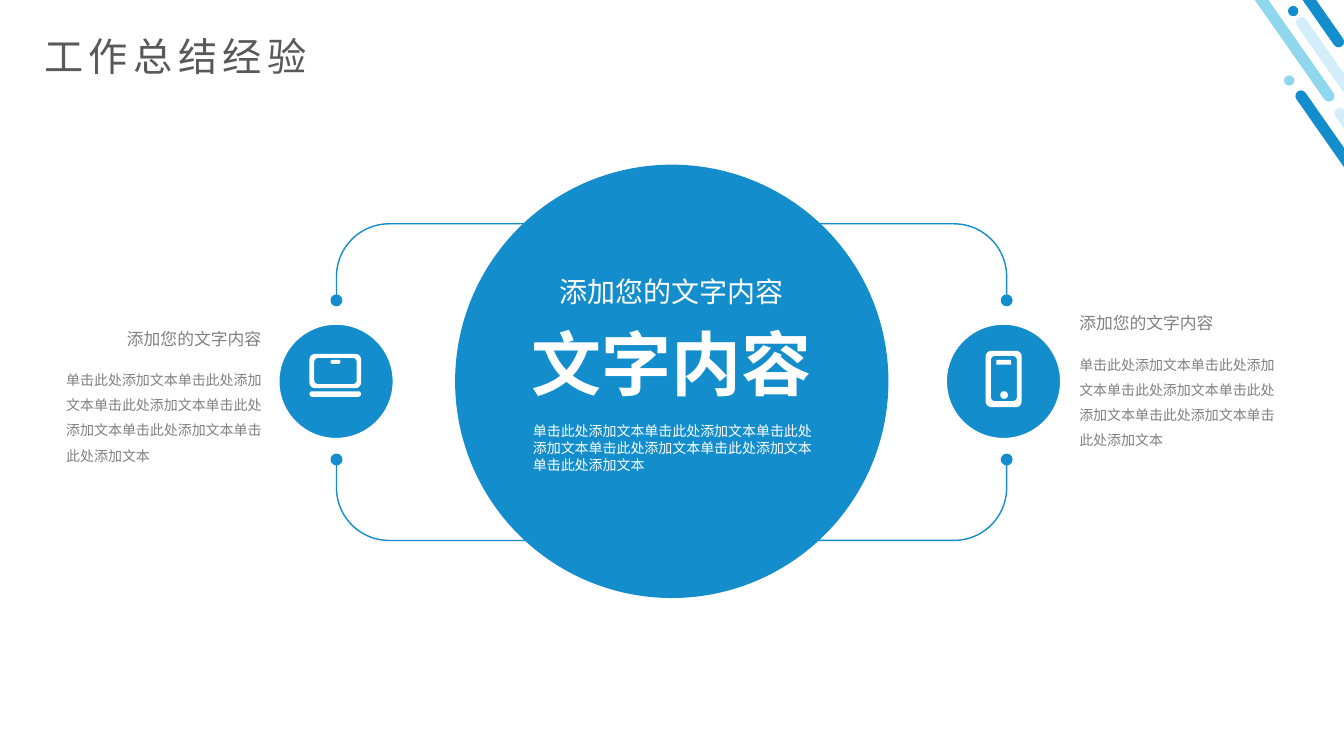
import math
from typing import NamedTuple

from lxml import etree
from pptx import Presentation
from pptx.dml.color import RGBColor
from pptx.enum import shapes, text
from pptx.oxml import ns
from pptx.util import Cm, Pt

COLORS = {"blue": "138DCC", "sky": "8FD7ED", "pale": "D3EEF9", "white": "FFFFFF",
          "title": "595959", "grey": "808080"}
FONT = "Noto Sans CJK SC"
HEADING = "添加您的文字内容"
BODY = "单击此处添加文本" * 6
CENTER_X, CENTER_Y = 16.93, 9.61
ROUND, OVAL = shapes.MSO_SHAPE.ROUNDED_RECTANGLE, shapes.MSO_SHAPE.OVAL


class Stripe(NamedTuple):
    left: float
    top: float
    length: float
    color: str


class Dot(NamedTuple):
    x: float
    y: float
    size: float
    color: str = "blue"


class Label(NamedTuple):
    left: float
    top: float
    width: float
    height: float
    words: str
    size: int
    color: str
    align: text.PP_ALIGN = text.PP_ALIGN.LEFT
    bold: bool = False
    line_spacing: float = 1.0
    tracking: int = 0  # hundredths of a point


class Outline(NamedTuple):
    left: float
    top: float
    width: float
    height: float
    radius: float


STRIPES = [
    Stripe(34.16, 1.8, 5.56, "blue"),
    Stripe(35.15, 2.24, 5.56, "pale"),
    Stripe(31.42, -3.84, 7.01, "sky"),
    Stripe(34.59, -0.18, 7.01, "pale"),
    Stripe(32.08, -3.89, 5.56, "blue"),
]
CORNER_DOTS = [Dot(32.49, 2.03, 0.26, "sky"), Dot(32.59, 0.28, 0.26)]
FRAME_LEFT, FRAME_RIGHT = 8.48, 25.37
FRAME_DOTS = [Dot(x, y, 0.3) for x in (FRAME_LEFT, FRAME_RIGHT) for y in (7.57, 11.58)]
ICON_DISCS = [Dot(8.47, CENTER_Y, 3.38), Dot(25.29, CENTER_Y, 3.38)]

LABELS = [
    Label(0.86, 0.69, 32.9, 1.45, "工作总结经验", 28, "title", tracking=400),
    Label(1.42, 9.02, 5.69, 1.96, BODY, 10, "grey", line_spacing=1.5),
    Label(2.95, 8.15, 3.99, 0.76, HEADING, 12, "grey"),
    Label(26.95, 8.64, 5.69, 1.96, BODY, 10, "grey", line_spacing=1.5),
    Label(26.95, 7.75, 3.99, 0.76, HEADING, 12, "grey"),
    Label(13, 6.78, 7.85, 1.12, HEADING, 20, "white", text.PP_ALIGN.CENTER),
    Label(13, 7.95, 7.85, 2.39, "文字内容", 50, "white", text.PP_ALIGN.CENTER, True),
    Label(13.18, 10.52, 7.6, 1.96, BODY, 10, "white"),
]

LAPTOP = [
    Outline(7.8, 9.86, 1.3, 0.14, 0.07),
    Outline(7.8, 8.92, 1.3, 0.86, 0.14),
    Outline(7.92, 9.02, 1.07, 0.66, 0.1),
    Outline(8.33, 9.07, 0.25, 0.1, 0.05),
]
PHONE = [
    Outline(25.21, 9.86, 0.19, 0.19, 0.09),
    Outline(24.84, 8.84, 0.91, 1.42, 0.15),
    Outline(24.97, 8.97, 0.66, 1.14, 0.11),
    Outline(25.11, 9.07, 0.37, 0.12, 0.01),
]


def rgb(color: str) -> RGBColor:
    return RGBColor.from_string(COLORS[color])


def paint(sp, fill: str = "", line: str = "", weight: float = 0) -> None:
    """Set fill and line; an empty colour means none."""
    sp.shadow.inherit = False
    if fill:
        sp.fill.solid()
        sp.fill.fore_color.rgb = rgb(fill)
    else:
        sp.fill.background()
    if line:
        sp.line.color.rgb = rgb(line)
        sp.line.width = Pt(weight)
    else:
        sp.line.fill.background()


def add_stripe(slide, stripe: Stripe) -> None:
    sp = slide.shapes.add_shape(ROUND, Cm(stripe.left), Cm(stripe.top), Cm(0.28), Cm(stripe.length))
    sp.adjustments[0] = 0.5
    sp.rotation = 325
    paint(sp, stripe.color)


def add_dot(slide, dot: Dot, line: str = "", weight: float = 0) -> None:
    sp = slide.shapes.add_shape(OVAL, Cm(dot.x - dot.size / 2), Cm(dot.y - dot.size / 2),
                                Cm(dot.size), Cm(dot.size))
    paint(sp, dot.color, line, weight)


def add_label(slide, label: Label) -> None:
    box = slide.shapes.add_textbox(Cm(label.left), Cm(label.top), Cm(label.width), Cm(label.height))
    tf = box.text_frame
    tf.word_wrap = True
    p = tf.paragraphs[0]
    p.text = label.words
    p.alignment = label.align
    p.line_spacing = label.line_spacing
    p.font.name = FONT
    p.font.size = Pt(label.size)
    p.font.bold = label.bold
    p.font.color.rgb = rgb(label.color)
    props = p._p.pPr.find(ns.qn("a:defRPr"))
    props.set("spc", str(label.tracking))
    east_asian = etree.Element(ns.qn("a:ea"), typeface=FONT)
    props.find(ns.qn("a:latin")).addnext(east_asian)


def rounded_points(o: Outline, steps: int = 8) -> list[tuple[int, int]]:
    """Trace a rounded rectangle clockwise from its left side."""
    left, right = o.left + o.radius, o.left + o.width - o.radius
    top, bottom = o.top + o.radius, o.top + o.height - o.radius
    corners = [(left, top), (right, top), (right, bottom), (left, bottom)]
    points = []
    for i, (x, y) in enumerate(corners):
        for step in range(steps + 1):
            angle = math.pi * (1 + (i + step / steps) / 2)
            points.append((Cm(x + o.radius * math.cos(angle)), Cm(y + o.radius * math.sin(angle))))
    return points


def add_icon(slide, outlines: list[Outline]) -> None:
    """Draw nested outlines as one shape, so that inner ones become holes."""
    first, *others = [rounded_points(o) for o in outlines]
    builder = slide.shapes.build_freeform(*first[0])
    builder.add_line_segments(first[1:])
    for points in others:
        builder.move_to(*points[0])
        builder.add_line_segments(points[1:])
    paint(builder.convert_to_shape(), "white")


def main() -> None:
    prs = Presentation()
    prs.slide_width, prs.slide_height = Cm(33.87), Cm(19.05)
    slide = prs.slides.add_slide(prs.slide_layouts[6])
    for stripe in STRIPES:
        add_stripe(slide, stripe)
    for dot in CORNER_DOTS:
        add_dot(slide, dot)

    add_dot(slide, Dot(CENTER_X, CENTER_Y, 10.92))
    frame = slide.shapes.add_shape(ROUND, Cm(FRAME_LEFT), Cm(5.64),
                                   Cm(FRAME_RIGHT - FRAME_LEFT), Cm(7.98))
    paint(frame, line="blue", weight=1)
    for disc in ICON_DISCS:
        add_dot(slide, disc, "white", 15)
    for dot in FRAME_DOTS:
        add_dot(slide, dot)

    for label in LABELS:
        add_label(slide, label)
    for icon in (LAPTOP, PHONE):
        add_icon(slide, icon)
    prs.save("out.pptx")


if __name__ == "__main__":
    main()
